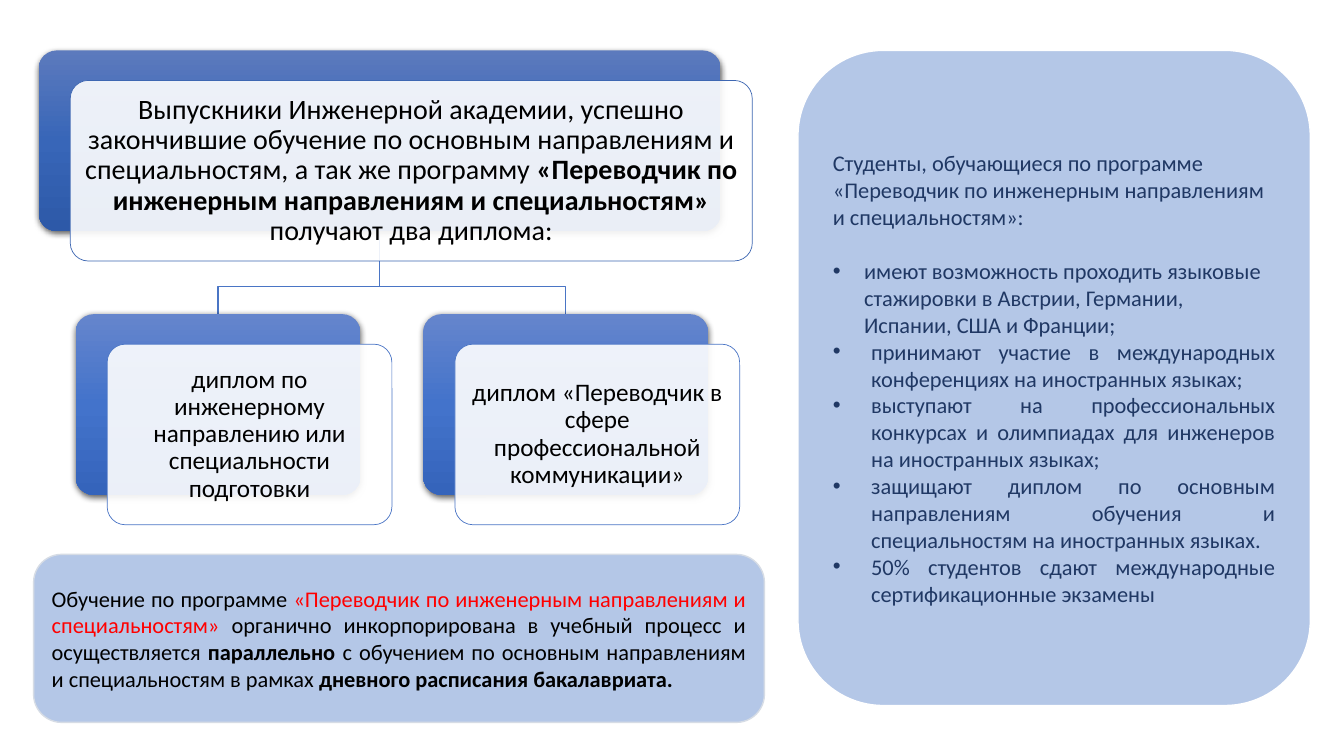
from dataclasses import dataclass
from lxml.etree import SubElement as Sub
from pptx import Presentation
from pptx.dml.color import RGBColor as RGB
from pptx.enum.shapes import MSO_SHAPE as Shape
from pptx.enum.text import MSO_ANCHOR as Anchor, PP_ALIGN as Align
from pptx.oxml.ns import qn
from pptx.util import Emu, Inches, Pt

COLS, ROWS = 160, 90
CELL = Inches(13.333333) / COLS


@dataclass(frozen=True)
class Theme:
    font: str = "Calibri"
    ink: str = "000000"
    navy: str = "203864"
    accent: str = "FF0000"
    panel: str = "B4C7E7"
    panel_edge: str = "D6DCE5"
    white: str = "FFFFFF"
    root_edge: str = "3E67B2"
    leaf_edge: str = "4A75C5"
    root_grad: tuple = ("5C7ABD", "3866B8", "2D59A8")
    leaf_grad: tuple = ("6585CC", "4373CB", "3564BB")
    body: int = 16
    leaf: int = 18
    root: int = 20


T = Theme()
PROGRAM = "«Переводчик по инженерным направлениям и специальностям» "
ROOT_TEXT = [
    ("Выпускники Инженерной академии, успешно закончившие обучение по основным "
     "направлениям и специальностям, а так же программу ", False, T.ink),
    (PROGRAM, True, T.ink),
    ("получают два диплома:", False, T.ink),
]
LEAF_TEXTS = [
    "диплом по инженерному направлению или специальности подготовки",
    "диплом «Переводчик в сфере профессиональной коммуникации»",
]
NOTE_TEXT = [
    ("Обучение по программе ", False, T.ink),
    (PROGRAM, False, T.accent),
    ("органично инкорпорирована в учебный процесс и осуществляется ", False, T.ink),
    ("параллельно ", True, T.ink),
    ("с обучением по основным направлениям и специальностям в рамках ", False, T.ink),
    ("дневного расписания бакалавриата.", True, T.ink),
]
STUDENTS_LEAD = ("Студенты, обучающиеся по программе «Переводчик по инженерным "
                 "направлениям и специальностям»:")
STUDENTS_POINTS = [
    ("имеют возможность проходить языковые стажировки в Австрии, Германии, "
     "Испании, США и Франции;", Align.LEFT, 0.31),
    ("принимают участие в международных конференциях на иностранных языках;",
     Align.JUSTIFY, 0.38),
    ("выступают на профессиональных конкурсах и олимпиадах для инженеров "
     "на иностранных языках;", Align.JUSTIFY, 0.38),
    ("защищают диплом по основным направлениям обучения и специальностям "
     "на иностранных языках.", Align.JUSTIFY, 0.38),
    ("50% студентов сдают международные сертификационные экзамены",
     Align.JUSTIFY, 0.38),
]


def cells(*values):
    return [Emu(round(v * CELL)) for v in values]


def rounded(slide, box, edge=None, width=1, fill=None, radius=None):
    s = slide.shapes.add_shape(Shape.ROUNDED_RECTANGLE, *cells(*box))
    s.shadow.inherit = False
    if radius:
        s.adjustments[0] = radius
    if fill:
        s.fill.solid()
        s.fill.fore_color.rgb = RGB.from_string(fill)
    if edge:
        s.line.color.rgb = RGB.from_string(edge)
        s.line.width = Pt(width)
    else:
        s.line.fill.background()
    tf = s.text_frame
    tf.word_wrap = True
    tf.vertical_anchor = Anchor.MIDDLE
    return s


def write(p, runs, size, align):
    p.alignment = align
    p.font.name = T.font
    p.font.size = Pt(size)
    for text, bold, color in runs:
        r = p.add_run()
        r.text = text
        r.font.name = T.font
        r.font.size = Pt(size)
        r.font.bold = bold
        r.font.color.rgb = RGB.from_string(color)


def bullet(p, indent):
    pPr = p._p.get_or_add_pPr()
    pPr.set("marL", str(Inches(indent)))
    pPr.set("indent", str(-Inches(indent)))
    font = Sub(pPr, qn("a:buFont"), typeface="Arial")
    char = Sub(pPr, qn("a:buChar"), char="•")
    pPr.remove(font)
    pPr.remove(char)
    pPr.insert(0, char)
    pPr.insert(0, font)


def shade(s, colors):
    s.fill.gradient()
    s.fill.gradient_angle = 270
    stops = s._element.spPr.find(".//" + qn("a:gsLst"))
    for stop in list(stops):
        stops.remove(stop)
    for i, color in enumerate(colors):
        stop = Sub(stops, qn("a:gs"), pos=str(50000 * i))
        Sub(stop, qn("a:srgbClr"), val=color)


def cast_shadow(s):
    effects = s._element.spPr.find(qn("a:effectLst"))
    shadow = Sub(effects, qn("a:outerShdw"), blurRad=str(Pt(4.5)),
                 dist=str(Pt(1.5)), dir="5400000", algn="ctr", rotWithShape="0")
    color = Sub(shadow, qn("a:srgbClr"), val="000000")
    Sub(color, qn("a:alpha"), val="63000")


def card(slide, box, grad, edge, runs, size, inset):
    x, y, w, h = box
    back = rounded(slide, box, radius=0.1)
    shade(back, grad)
    cast_shadow(back)
    front = rounded(slide, (x + 3.76, y + 3.57, w, h), edge, 0.5, T.white, 0.1)
    Sub(front._element.spPr.find(".//" + qn("a:srgbClr")), qn("a:alpha"), val="90000")
    tf = front.text_frame
    tf.margin_left = tf.margin_right = tf.margin_top = tf.margin_bottom = Inches(inset)
    p = tf.paragraphs[0]
    write(p, runs, size, Align.CENTER)
    p.line_spacing = 0.9


def branch(slide, start, end):
    (x1, y1), (x2, y2) = cells(*start), cells(*end)
    bend = cells((start[1] + end[1]) / 2 + 1.65)[0]
    fb = slide.shapes.build_freeform(x1, y1, scale=1.0)
    fb.add_line_segments([(x1, bend), (x2, bend), (x2, y2)], close=False)
    s = fb.convert_to_shape()
    s.shadow.inherit = False
    s.fill.background()
    s.line.color.rgb = RGB.from_string(T.leaf_edge)
    s.line.width = Pt(1)


def diploma_tree(slide, box):
    x, y, w, h = box
    card_h, leaf_w, pitch = 21.5, 33.9, 41.4
    leaf_y = y + h - card_h
    lefts = [x + 4.4 + pitch * i for i in range(len(LEAF_TEXTS))]
    for left in lefts:
        branch(slide, (x + w / 2, y + card_h), (left + leaf_w / 2, leaf_y))
    card(slide, (x, y, w, card_h), T.root_grad, T.root_edge, ROOT_TEXT, T.root, 0.08)
    for left, text in zip(lefts, LEAF_TEXTS):
        card(slide, (left, leaf_y, leaf_w, card_h), T.leaf_grad, T.leaf_edge,
             [(text, False, T.ink)], T.leaf, 0.07)


def students_panel(slide, box):
    tf = rounded(slide, box, T.white, fill=T.panel).text_frame
    p = tf.paragraphs[0]
    write(p, [(STUDENTS_LEAD, False, T.navy)], T.body, Align.LEFT)
    p.space_after = Pt(19.5)
    for text, align, indent in STUDENTS_POINTS:
        p = tf.add_paragraph()
        write(p, [(text, False, T.navy)], T.body, align)
        bullet(p, indent)


def schedule_note(slide, box):
    tf = rounded(slide, box, T.panel_edge, fill=T.panel).text_frame
    write(tf.paragraphs[0], NOTE_TEXT, T.body, Align.JUSTIFY)


def main():
    prs = Presentation()
    prs.slide_width, prs.slide_height = cells(COLS, ROWS)
    slide = prs.slides.add_slide(prs.slide_layouts[6])
    diploma_tree(slide, (4.6, 6, 81.2, 52.9))
    students_panel(slide, (95, 6, 61, 78))
    schedule_note(slide, (4, 66, 87, 20))
    prs.save("out.pptx")


if __name__ == "__main__":
    main()
